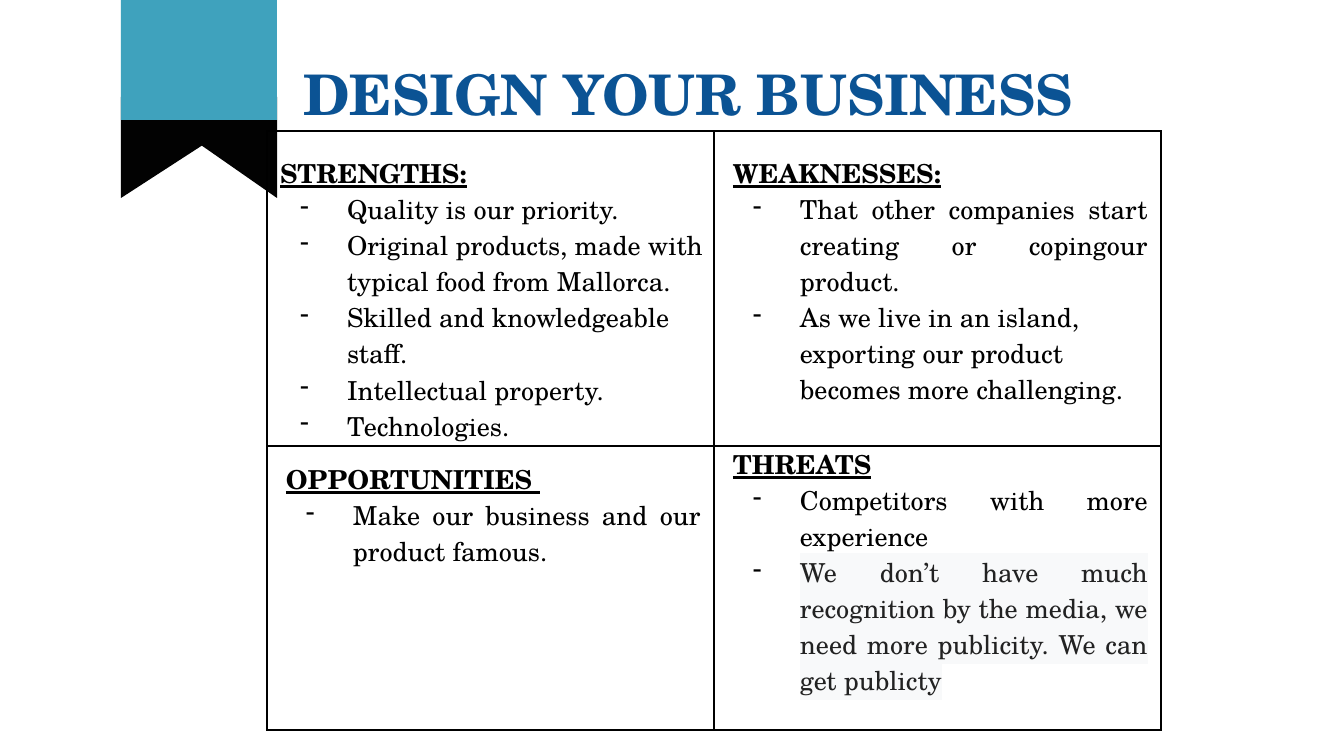
from pptx import Presentation
from pptx.dml.color import RGBColor
from pptx.enum.shapes import MSO_SHAPE
from pptx.enum.text import MSO_ANCHOR, PP_ALIGN
from pptx.oxml.ns import qn
from pptx.util import Pt
from lxml.etree import SubElement, Element

SCALE = 914400 / 134.4
FONT = "TeX Gyre Schola"
COLORS = {
    "ribbon": "3FA2BD",
    "tail": "020202",
    "title": "0B5394",
    "text": "000000",
    "quote": "222222",
    "highlight": "F8F9FA",
}
LEFT, JUSTIFY = PP_ALIGN.LEFT, PP_ALIGN.JUSTIFY
QUADRANTS = [
    ((267, 140, 453, 281), "STRENGTHS:", LEFT, [
        ("Quality is our priority.", LEFT),
        ("Original products, made with typical food from Mallorca.", LEFT),
        ("Skilled and knowledgeable staff.", LEFT),
        ("Intellectual property.", LEFT),
        ("Technologies.", LEFT),
    ]),
    ((720, 140, 441, 441), "WEAKNESSES:", JUSTIFY, [
        ("That other companies start creating or copingour product.", JUSTIFY),
        ("As we live in an island, exporting our product becomes more challenging.", LEFT),
    ]),
    ((273, 446, 441, 441), "OPPORTUNITIES ", JUSTIFY, [
        ("Make our business and our product famous.", JUSTIFY),
    ]),
    ((720, 431, 441, 441), "THREATS", JUSTIFY, [
        ("Competitors with more experience", JUSTIFY),
        ("We don’t have much recognition by the media, we need more publicity. "
         "We can get publicty", JUSTIFY),
    ]),
]


def px(value):
    """Turn pixels into EMU."""
    return round(value * SCALE)


def color(name):
    """Look up a colour by name."""
    return RGBColor.from_string(COLORS[name])


def add_block(page, kind, area, fill, rotation=0, flipped=False):
    """Add a plain filled shape."""
    block = page.shapes.add_shape(kind, *map(px, area))
    block.shadow.inherit = False
    block.fill.solid()
    block.fill.fore_color.rgb = color(fill)
    block.line.fill.background()
    block.rotation = rotation
    if flipped:
        block._element.spPr.get_or_add_xfrm().set("flipH", "1")


def add_ribbon(page):
    """Draw the hanging ribbon with its notched tail."""
    triangle = MSO_SHAPE.RIGHT_TRIANGLE
    add_block(page, triangle, (121, 97, 156, 101), "tail", 180, True)
    add_block(page, triangle, (132, 97, 145, 101), "tail", 180)
    add_block(page, MSO_SHAPE.RECTANGLE, (121, 0, 156, 120), "ribbon")


def set_frame(frame, anchor):
    """Give a text frame wrapping, equal insets and an anchor."""
    frame.word_wrap = True
    frame.vertical_anchor = anchor
    frame.margin_left = frame.margin_right = px(13)
    frame.margin_top = frame.margin_bottom = px(13)


def set_font(font, size, name, bold=False, underline=False):
    """Format a font."""
    font.name = FONT
    font.size = Pt(size)
    font.bold = bold
    font.underline = underline
    font.color.rgb = color(name)


def add_title(page, text):
    """Place and format the title placeholder."""
    title = page.shapes.title
    title.left, title.top, title.width, title.height = map(px, (290, 27, 860, 113))
    set_frame(title.text_frame, MSO_ANCHOR.BOTTOM)
    para = title.text_frame.paragraphs[0]
    para.text = text
    para.alignment = LEFT
    set_font(para.font, 30, "title", bold=True)


def add_grid(page):
    """Draw the empty two by two table with thin borders."""
    grid = page.shapes.add_table(2, 2, px(267), px(131), px(894), px(599)).table
    grid.first_row = grid.horz_banding = False
    for column in grid.columns:
        column.width = px(447)
    for row, height in zip(grid.rows, (315, 284)):
        row.height = px(height)
    for cell in grid.iter_cells():
        cell.fill.background()
        properties = cell._tc.get_or_add_tcPr()
        for index, side in enumerate(("lnL", "lnR", "lnT", "lnB")):
            border = Element(qn(f"a:{side}"), w=str(Pt(0.75)))
            fill = SubElement(border, qn("a:solidFill"))
            SubElement(fill, qn("a:srgbClr"), val=COLORS["text"])
            properties.insert(index, border)


def set_dash(para):
    """Give a paragraph a hanging dash bullet."""
    properties = para._p.get_or_add_pPr()
    properties.set("marL", str(px(67)))
    properties.set("indent", str(px(-47)))
    bullet_color = SubElement(properties, qn("a:buClr"))
    SubElement(bullet_color, qn("a:srgbClr"), val=COLORS["text"])
    SubElement(properties, qn("a:buChar"), char="-")


def highlight(span):
    """Set a span in grey on a pale background."""
    span.font.color.rgb = color("quote")
    mark = SubElement(span.font._element, qn("a:highlight"))
    SubElement(mark, qn("a:srgbClr"), val=COLORS["highlight"])


def add_quadrant(page, area, heading, alignment, items):
    """Add a heading with its dashed list and return the text frame."""
    frame = page.shapes.add_textbox(*map(px, area)).text_frame
    set_frame(frame, MSO_ANCHOR.TOP)
    para = frame.paragraphs[0]
    para.text = heading
    para.alignment = alignment
    para.line_spacing = 1.15
    set_font(para.font, 14, "text", bold=True, underline=True)
    for text, item_alignment in items:
        para = frame.add_paragraph()
        para.text = text
        set_dash(para)
        para.alignment = item_alignment
        para.line_spacing = 1.15
        set_font(para.font, 14, "text")
    return frame


def main():
    """Build the slide and save it."""
    deck = Presentation()
    deck.slide_width, deck.slide_height = px(1344), px(756)
    page = deck.slides.add_slide(deck.slide_layouts.get_by_name("Title Only"))
    add_ribbon(page)
    add_title(page, "DESIGN YOUR BUSINESS")
    frames = [add_quadrant(page, *quadrant) for quadrant in QUADRANTS]
    highlight(frames[-1].paragraphs[-1].runs[0])
    add_grid(page)
    deck.save("out.pptx")


if __name__ == "__main__":
    main()
